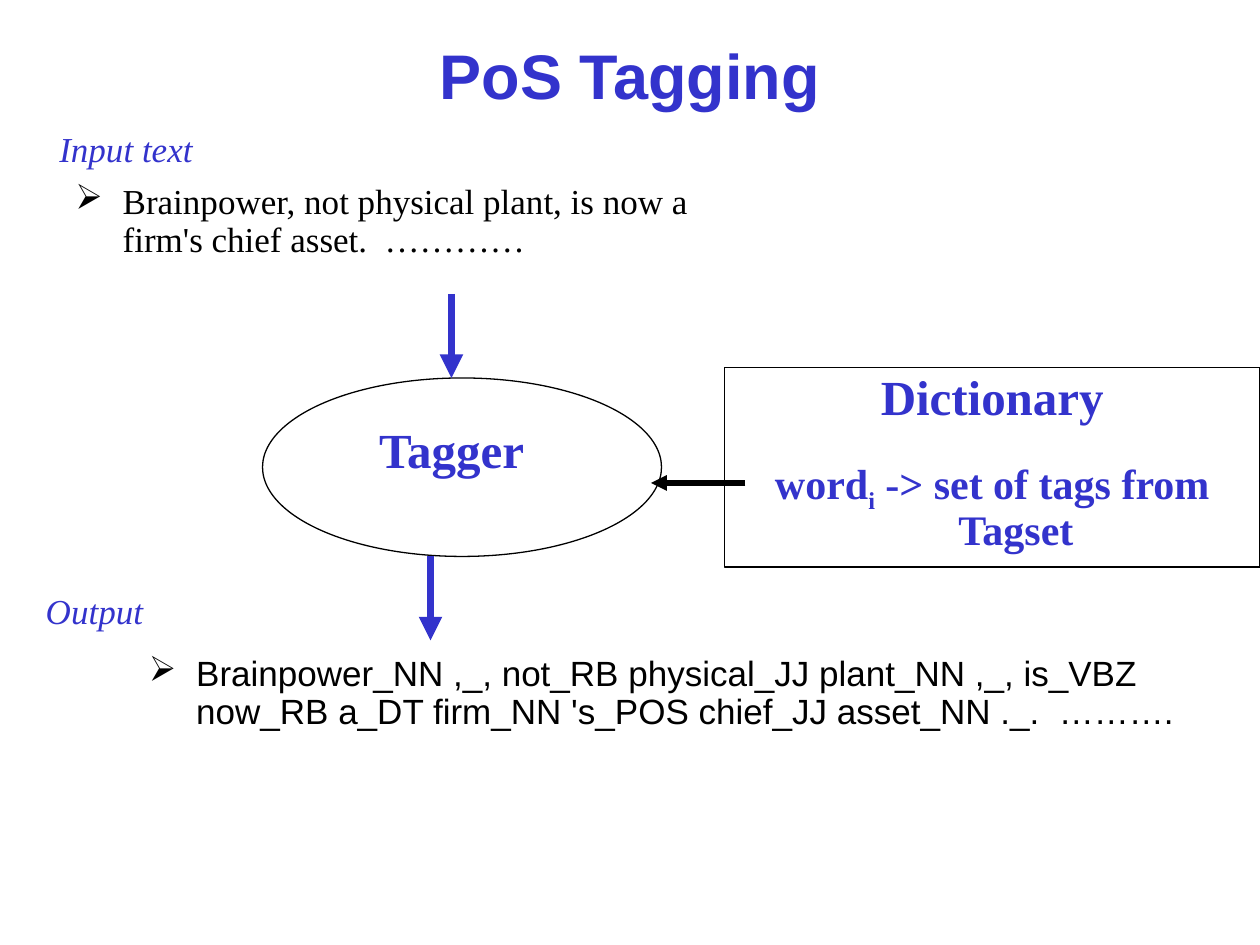
"""Build the PoS Tagging slide: input text, tagger, dictionary and output."""
from lxml.etree import SubElement
from pptx import Presentation
from pptx.dml.color import RGBColor
from pptx.enum.shapes import MSO_CONNECTOR, MSO_SHAPE
from pptx.enum.text import MSO_ANCHOR, PP_ALIGN
from pptx.oxml.ns import qn
from pptx.util import Pt

BLUE, BLACK = "3333CC", "000000"
SERIF, SANS = "Times New Roman", "Arial"
INDENT = Pt(27)


def color(value):
    return RGBColor.from_string(value)


def write(paragraph, text, size, font=SERIF, ink=BLUE, bullet=None, indent=INDENT):
    paragraph.alignment = PP_ALIGN.LEFT if bullet else PP_ALIGN.CENTER
    paragraph.line_spacing = 0.9
    paragraph.space_before = Pt(18) if indent else Pt(0)
    paragraph.font.size = Pt(size)
    paragraph.font.name = font
    paragraph.font.color.rgb = color(ink)
    properties = paragraph._p.get_or_add_pPr()
    properties.set("marL", str(indent))
    properties.set("indent", str(-indent))
    if bullet:
        mark = SubElement(properties, qn("a:buChar"), char=bullet)
        properties.find(qn("a:defRPr")).addprevious(mark)
    for part in text:
        paragraph.add_run().text = part
    for span in paragraph.runs:
        span.font.size = Pt(size)
        span.font.name = font
        span.font.color.rgb = color(ink)


deck = Presentation()
deck.slide_width, deck.slide_height = Pt(720), Pt(540)
page = deck.slides.add_slide(deck.slide_layouts[6])

title = page.shapes.add_textbox(Pt(54), Pt(0), Pt(612), Pt(90))
title.text_frame.word_wrap = True
title.text_frame.vertical_anchor = MSO_ANCHOR.MIDDLE
heading = title.text_frame.paragraphs[0]
write(heading, ["PoS Tagging"], 36, SANS, indent=0)
heading.runs[0].font.bold = True

outlines = []
for preset, left, top, width, height in [
    (MSO_SHAPE.RECTANGLE, 414, 210, 306, 114),
    (MSO_SHAPE.OVAL, 150, 216, 228, 102),
]:
    outline = page.shapes.add_shape(preset, Pt(left), Pt(top), Pt(width), Pt(height))
    outline.shadow.inherit = False
    outline.fill.background()
    outline.line.color.rgb = color(BLACK)
    outline.line.width = Pt(0.75)
    outlines.append(outline)

dictionary = outlines[0].text_frame
dictionary.word_wrap = True
dictionary.vertical_anchor = MSO_ANCHOR.TOP
write(dictionary.paragraphs[0], ["Dictionary"], 28)
write(dictionary.add_paragraph(), ["word", "i", " -> set of tags from Tagset"], 24)
for paragraph in dictionary.paragraphs:
    for span in paragraph.runs:
        span.font.bold = True
subscript = dictionary.paragraphs[1].runs[1]
subscript.font._element.set("baseline", "-25000")

for text, left, top, width, height, size, font, ink, bullet, bold, italic in [
    ("Input text", 0, 72, 144, 48, 20, SERIF, BLUE, None, False, True),
    ("Brainpower, not physical plant, is now a firm's chief asset.  …………",
     36, 102, 372, 60, 20, SERIF, BLACK, "➢", False, False),
    ("Tagger", 144, 240, 228, 54, 28, SERIF, BLUE, None, True, False),
    ("Output", -18, 336, 144, 48, 20, SERIF, BLUE, None, False, True),
    ("Brainpower_NN ,_, not_RB physical_JJ plant_NN ,_, is_VBZ now_RB a_DT "
     "firm_NN 's_POS chief_JJ asset_NN ._.  ……….",
     78, 371.5, 612, 66, 20, SANS, BLACK, "➢", False, False),
]:
    box = page.shapes.add_textbox(Pt(left), Pt(top), Pt(width), Pt(height))
    box.text_frame.word_wrap = True
    paragraph = box.text_frame.paragraphs[0]
    write(paragraph, [text], size, font, ink, bullet)
    paragraph.runs[0].font.bold = bold
    paragraph.runs[0].font.italic = italic

for start_x, start_y, end_x, end_y, ink, weight in [
    (258, 168, 258, 216, BLUE, 4.5),
    (246, 318, 246, 366, BLUE, 4.5),
    (426, 276, 372, 276, BLACK, 3),
]:
    arrow = page.shapes.add_connector(
        MSO_CONNECTOR.STRAIGHT, Pt(start_x), Pt(start_y), Pt(end_x), Pt(end_y))
    arrow.line.color.rgb = color(ink)
    arrow.line.width = Pt(weight)
    SubElement(arrow.line._get_or_add_ln(), qn("a:tailEnd"), type="triangle")
    SubElement(arrow._element.spPr, qn("a:effectLst"))

deck.save("out.pptx")
